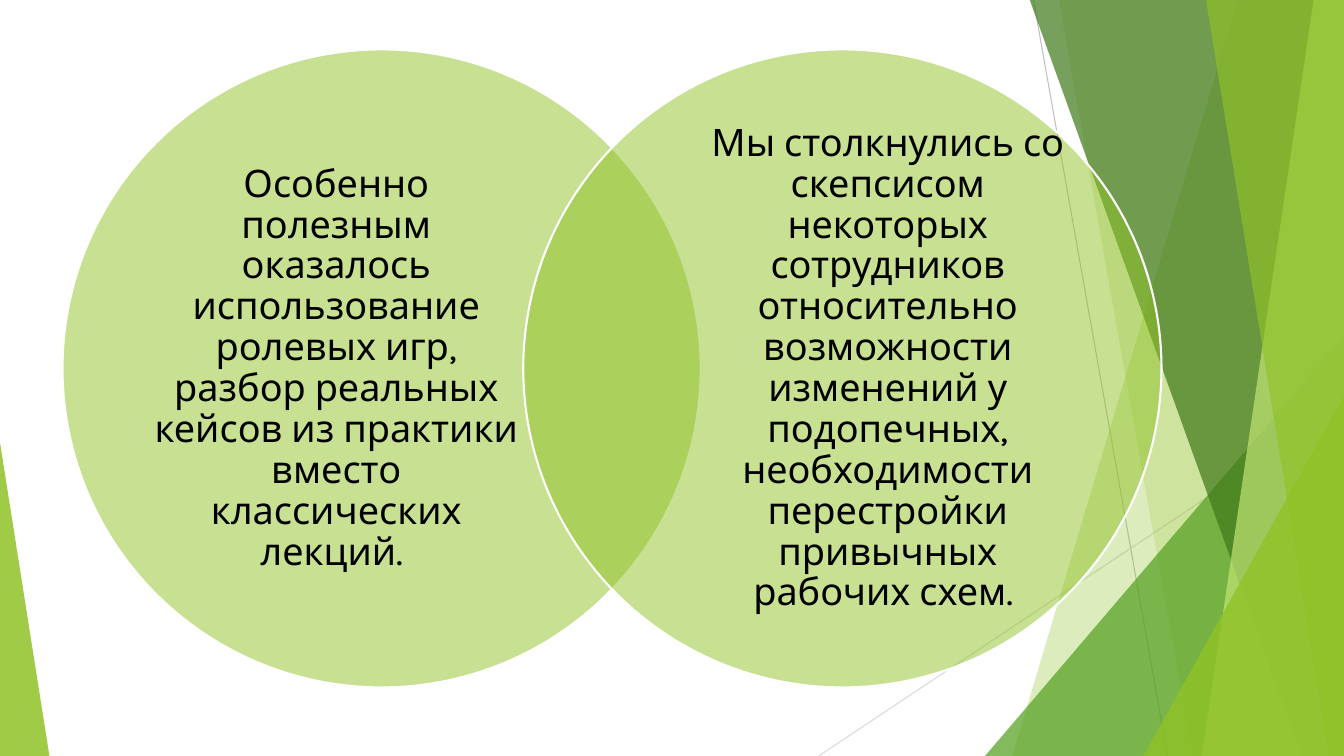
from typing import NamedTuple

from pptx import Presentation
from pptx.dml.color import RGBColor
from pptx.enum.shapes import MSO_CONNECTOR, MSO_SHAPE
from pptx.enum.text import MSO_ANCHOR, PP_ALIGN
from pptx.oxml.ns import qn
from pptx.util import Inches, Pt
from lxml.etree import SubElement

WIDTH, HEIGHT = 13.33, 7.5
BAND_TOP = -0.01

WHITE = RGBColor(0xFF, 0xFF, 0xFF)
BLACK = RGBColor(0x00, 0x00, 0x00)
GREY = RGBColor(0xBF, 0xBF, 0xBF)
LIGHT_GREY = RGBColor(0xD9, 0xD9, 0xD9)
LIME = RGBColor(0x90, 0xC2, 0x26)
PALE_LIME = RGBColor(0xC0, 0xE4, 0x74)
GREEN = RGBColor(0x54, 0xA0, 0x21)
DARK_GREEN = RGBColor(0x3F, 0x78, 0x19)


class Ray(NamedTuple):
    start: tuple[float, float]
    end: tuple[float, float]
    color: RGBColor


class Band(NamedTuple):
    """A strip from a slanted left side to the right edge of the page."""
    top_x: float
    bottom_x: float
    color: RGBColor
    opacity: int


class Wedge(NamedTuple):
    """A right triangle standing on the bottom edge of the page."""
    left: float
    width: float
    height: float
    apex: float
    color: RGBColor
    opacity: int


class Circle(NamedTuple):
    left: float
    text_left: float
    text: str


RAYS = [
    Ray((10.25, 0), (11.58, HEIGHT), GREY),
    Ray((WIDTH, 4.03), (8.12, HEIGHT), LIGHT_GREY),
]
DECORATION = [
    Band(12.28, 10.04, LIME, 30),
    Band(10.5, 11.83, LIME, 20),
    Wedge(9.77, 3.56, 4.17, 1, GREEN, 72),
    Band(10.21, 12.91, DARK_GREEN, 70),
    Band(13.03, 11.92, PALE_LIME, 70),
    Band(11.96, 13.18, LIME, 65),
    Wedge(11.34, 1.99, 3.57, 1, LIME, 80),
    Wedge(0, 0.49, 3.11, 0, LIME, 85),
]
CIRCLE_TOP, CIRCLE_SIZE = 0.49, 6.33
TEXT_TOP, TEXT_WIDTH, TEXT_HEIGHT = 1.24, 3.65, 4.84
CIRCLES = [
    Circle(0.62, 1.51,
           "Особенно полезным оказалось использование ролевых игр, разбор "
           "реальных кейсов из практики вместо классических лекций. "),
    Circle(5.19, 6.98,
           "Мы столкнулись со скепсисом некоторых сотрудников относительно "
           "возможности изменений у подопечных, необходимости перестройки "
           "привычных рабочих схем. "),
]


def fill_translucent(shape, color: RGBColor, opacity: int) -> None:
    shape.shadow.inherit = False
    shape.fill.solid()
    shape.fill.fore_color.rgb = color
    color_element = shape.fill._xPr.find(qn("a:solidFill"))[0]
    SubElement(color_element, qn("a:alpha"), val=str(opacity * 1000))


def draw_ray(page, ray: Ray) -> None:
    points = [Inches(value) for value in ray.start + ray.end]
    line = page.shapes.add_connector(MSO_CONNECTOR.STRAIGHT, *points)
    line.line.color.rgb = ray.color
    line.line.width = Pt(0.75)
    SubElement(line._element.spPr, qn("a:effectLst"))


def draw_band(page, band: Band) -> None:
    builder = page.shapes.build_freeform(
        Inches(band.top_x), Inches(BAND_TOP))
    corners = [(WIDTH, BAND_TOP), (WIDTH, HEIGHT), (band.bottom_x, HEIGHT)]
    builder.add_line_segments([(Inches(x), Inches(y)) for x, y in corners])
    shape = builder.convert_to_shape()
    fill_translucent(shape, band.color, band.opacity)
    shape.line.fill.background()


def draw_wedge(page, wedge: Wedge) -> None:
    shape = page.shapes.add_shape(
        MSO_SHAPE.ISOSCELES_TRIANGLE,
        Inches(wedge.left), Inches(HEIGHT - wedge.height),
        Inches(wedge.width), Inches(wedge.height))
    shape.adjustments[0] = wedge.apex
    fill_translucent(shape, wedge.color, wedge.opacity)
    shape.line.fill.background()


def draw_circle(page, circle: Circle) -> None:
    shape = page.shapes.add_shape(
        MSO_SHAPE.OVAL, Inches(circle.left), Inches(CIRCLE_TOP),
        Inches(CIRCLE_SIZE), Inches(CIRCLE_SIZE))
    fill_translucent(shape, LIME, 50)
    shape.line.color.rgb = WHITE
    shape.line.width = Pt(1.5)

    box = page.shapes.add_textbox(
        Inches(circle.text_left), Inches(TEXT_TOP),
        Inches(TEXT_WIDTH), Inches(TEXT_HEIGHT))
    frame = box.text_frame
    frame.word_wrap = True
    frame.vertical_anchor = MSO_ANCHOR.MIDDLE
    frame.margin_left = frame.margin_right = Inches(0)
    frame.margin_top = frame.margin_bottom = Inches(0)
    para = frame.paragraphs[0]
    para.alignment = PP_ALIGN.CENTER
    para.line_spacing = 0.9
    span = para.add_run()
    span.text = circle.text
    span.font.name = "Karla"
    span.font.size = Pt(27)
    span.font.color.rgb = BLACK


def main() -> None:
    deck = Presentation()
    deck.slide_width, deck.slide_height = Inches(WIDTH), Inches(HEIGHT)
    page = deck.slides.add_slide(deck.slide_layouts[6])
    page.background.fill.solid()
    page.background.fill.fore_color.rgb = WHITE

    for ray in RAYS:
        draw_ray(page, ray)
    for part in DECORATION:
        if isinstance(part, Band):
            draw_band(page, part)
        else:
            draw_wedge(page, part)
    for circle in CIRCLES:
        draw_circle(page, circle)
    deck.save("out.pptx")


if __name__ == "__main__":
    main()
